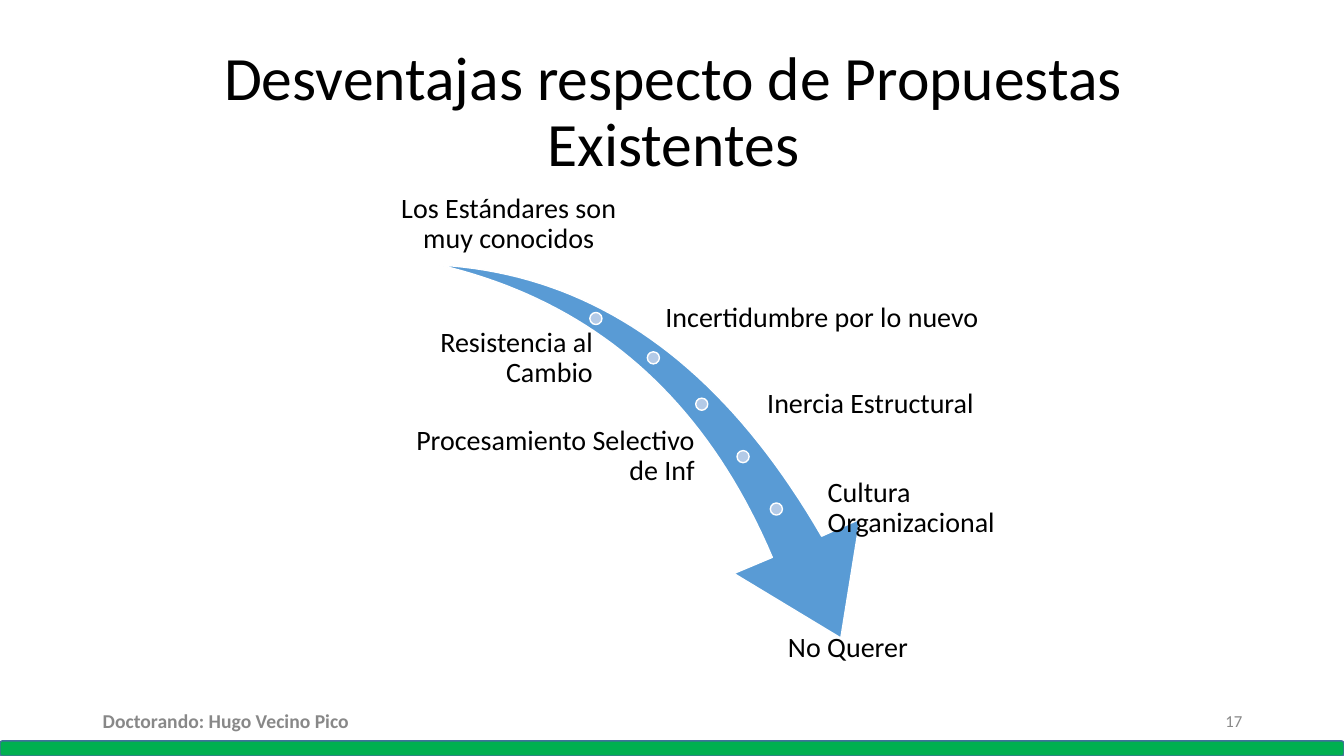
from pptx import Presentation
from pptx.dml.color import RGBColor
from pptx.enum.shapes import MSO_SHAPE
from pptx.enum.text import MSO_ANCHOR, MSO_AUTO_SIZE, PP_ALIGN
from pptx.util import Inches, Pt

COLORS = {
    "text": "000000", "footer": "888888", "arrow": "599BD5", "dot": "B3CAE7",
    "outline": "FFFFFF", "bar": "00B050", "bar_line": "42719B",
}
FONT = "Calibri"
TITLE = "Desventajas respecto de Propuestas Existentes"
LEFT, CENTER, RIGHT = PP_ALIGN.LEFT, PP_ALIGN.CENTER, PP_ALIGN.RIGHT
TOP, MIDDLE, BOTTOM = MSO_ANCHOR.TOP, MSO_ANCHOR.MIDDLE, MSO_ANCHOR.BOTTOM

LABEL_HEIGHT = 0.87
LABELS = [
    ("Los Estándares son muy conocidos", 3.94, 1.69, 2.21, CENTER, BOTTOM),
    ("Incertidumbre por lo nuevo", 6.57, 2.72, 3.34, LEFT, MIDDLE),
    ("Resistencia al Cambio", 3.94, 3.12, 1.97, RIGHT, MIDDLE),
    ("Inercia Estructural", 7.58, 3.58, 2.33, LEFT, MIDDLE),
    ("Procesamiento Selectivo de Inf", 3.94, 4.09, 2.98, RIGHT, MIDDLE),
    ("Cultura Organizacional", 8.18, 4.61, 1.73, LEFT, MIDDLE),
    ("No Querer", 6.92, 6.25, 2.98, CENTER, TOP),
]
FOOTERS = [
    ("Doctorando: Hugo Vecino Pico", 0.92, 4.5, LEFT, 14, True),
    ("17", 9.42, 3, RIGHT, 12, False),
]
DOT_SIZE = 0.12
DOTS = [(5.85, 3.1), (6.42, 3.49), (6.9, 3.95), (7.31, 4.47), (7.64, 4.99)]

UPPER_CURVE = [(4.36, 2.63), (5.9, 2.72), (7.16, 3.61), (8.15, 5.32)]
ARROW_HEAD = [(8.53, 5.15), (8.34, 6.33), (7.28, 5.69)]
LOWER_CURVE = [(7.66, 5.53), (6.99, 3.95), (5.89, 2.99), (4.36, 2.63)]
CURVE_STEPS = 40


def curve_points(controls):
    points = []
    for step in range(CURVE_STEPS + 1):
        t = step / CURVE_STEPS
        weights = ((1 - t) ** 3, 3 * t * (1 - t) ** 2, 3 * t ** 2 * (1 - t), t ** 3)
        points.append(tuple(
            sum(weight * point[axis] for weight, point in zip(weights, controls))
            for axis in (0, 1)))
    return points


def paint(shape, fill, line):
    shape.shadow.inherit = False
    shape.fill.solid()
    shape.fill.fore_color.rgb = RGBColor.from_string(COLORS[fill])
    shape.line.color.rgb = RGBColor.from_string(COLORS[line])
    shape.line.width = Pt(1)


def write(box, text, size, align, anchor, color="text", bold=False,
          spacing=0.9, insets=(0.1, 0.05)):
    frame = box.text_frame
    frame.text = text
    frame.word_wrap = True
    frame.auto_size = MSO_AUTO_SIZE.NONE
    frame.vertical_anchor = anchor
    frame.margin_left = frame.margin_right = Inches(insets[0])
    frame.margin_top = frame.margin_bottom = Inches(insets[1])
    para = frame.paragraphs[0]
    para.alignment = align
    para.line_spacing = spacing
    font = para.runs[0].font
    font.name, font.size, font.bold = FONT, Pt(size), bold
    font.color.rgb = RGBColor.from_string(COLORS[color])


def main():
    deck = Presentation()
    deck.slide_width, deck.slide_height = Inches(13.33), Inches(7.5)
    page = deck.slides.add_slide(deck.slide_layouts[5])
    shapes = page.shapes

    title = shapes.title
    title.left, title.top = Inches(1.19), Inches(0.4)
    title.width, title.height = Inches(10.98), Inches(1.45)
    write(title, TITLE, 44, CENTER, MIDDLE)

    bar = shapes.add_shape(MSO_SHAPE.ROUNDED_RECTANGLE, 0, Inches(7.35),
                           deck.slide_width, Inches(0.15))
    paint(bar, "bar", "bar_line")

    outline = [(Inches(x), Inches(y)) for x, y in
               curve_points(UPPER_CURVE) + ARROW_HEAD + curve_points(LOWER_CURVE)]
    builder = shapes.build_freeform(*outline[0], scale=1.0)
    builder.add_line_segments(outline[1:-1], close=True)
    paint(builder.convert_to_shape(), "arrow", "outline")

    for left, top in DOTS:
        dot = shapes.add_shape(MSO_SHAPE.OVAL, Inches(left), Inches(top),
                               Inches(DOT_SIZE), Inches(DOT_SIZE))
        paint(dot, "dot", "outline")

    for text, left, top, width, align, anchor in LABELS:
        box = shapes.add_textbox(Inches(left), Inches(top),
                                 Inches(width), Inches(LABEL_HEIGHT))
        write(box, text, 20, align, anchor, insets=(0.03, 0.03))

    for text, left, width, align, size, bold in FOOTERS:
        box = shapes.add_textbox(Inches(left), Inches(6.95), Inches(width), Inches(0.4))
        write(box, text, size, align, MIDDLE, "footer", bold, spacing=1.0)

    deck.save("out.pptx")


if __name__ == "__main__":
    main()
